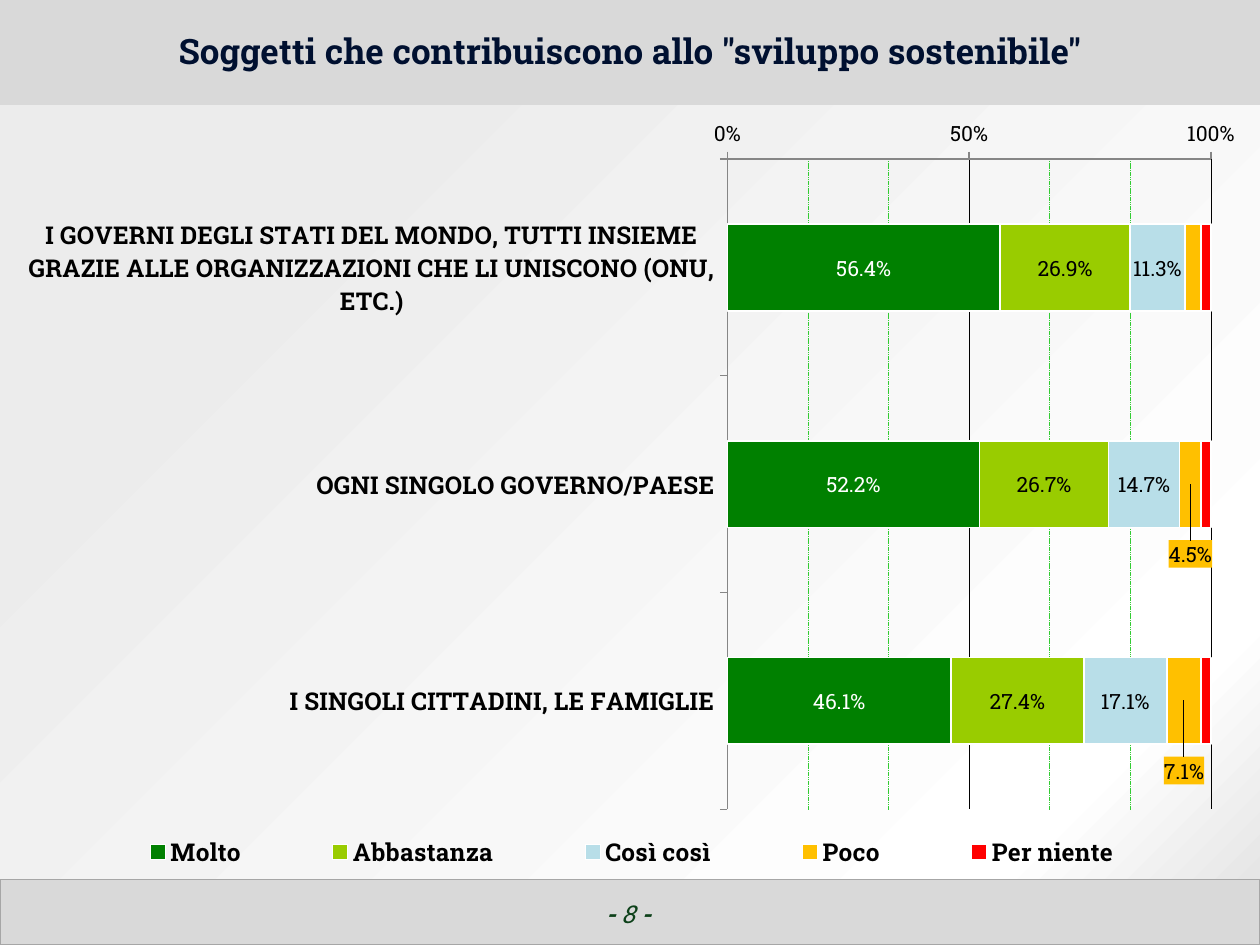
from lxml import etree
from pptx import Presentation
from pptx.chart.data import CategoryChartData
from pptx.dml.color import RGBColor
from pptx.enum.chart import XL_CHART_TYPE as ChartType, XL_LEGEND_POSITION as LegendPosition
from pptx.enum.chart import XL_TICK_MARK as TickMark
from pptx.enum.shapes import MSO_SHAPE as Shape
from pptx.enum.text import MSO_ANCHOR as Anchor, PP_ALIGN as Align
from pptx.oxml import parse_xml
from pptx.oxml.ns import nsdecls, qn
from pptx.util import Pt

PX = 914400 / 126
FONT = "Roboto Slab"
BLACK = RGBColor(0x00, 0x00, 0x00)
WHITE = RGBColor(0xFF, 0xFF, 0xFF)
BAND = RGBColor(0xD9, 0xD9, 0xD9)
BAND_EDGE = RGBColor(0xA6, 0xA6, 0xA6)
AXIS_GREY = RGBColor(0x86, 0x86, 0x86)
GRID_GREEN = RGBColor(0x33, 0xCC, 0x33)
NAVY = RGBColor(0x00, 0x10, 0x30)
PAGE_GREEN = RGBColor(0x0D, 0x41, 0x1A)
GREEN = RGBColor(0x00, 0x80, 0x00)
LIME = RGBColor(0x99, 0xCC, 0x00)
PALE_BLUE = RGBColor(0xB8, 0xDE, 0xE8)
AMBER = RGBColor(0xFF, 0xC0, 0x00)
RED = RGBColor(0xFF, 0x00, 0x00)


def px(*lengths):
    return [round(length * PX) for length in lengths]


def manual_layout(inner=False, edge=True, **fractions):
    """Return a c:layout element; with edge False, x and y are offsets."""
    layout = parse_xml(f"<c:layout {nsdecls('c')}><c:manualLayout/></c:layout>")
    parts = [("layoutTarget", "inner")] if inner else []
    if edge:
        parts += [("xMode", "edge"), ("yMode", "edge")]
    for tag, value in parts + list(fractions.items()):
        etree.SubElement(layout[0], qn(f"c:{tag}")).set("val", str(value))
    return layout


deck = Presentation()
deck.slide_width, deck.slide_height = px(1260, 945)
page = deck.slides.add_slide(deck.slide_layouts[6])

# Bands and backdrop
bands = []
for top, height in ((0, 106), (879, 66), (105, 774)):
    band = page.shapes.add_shape(Shape.RECTANGLE, *px(0, top, 1260, height))
    band.shadow.inherit = False
    band.fill.solid()
    band.fill.fore_color.rgb = BAND
    band.line.fill.background()
    bands.append(band)
header, footer, backdrop = bands
footer.line.color.rgb = BAND_EDGE
footer.line.width = Pt(0.75)

stops = "".join(
    f'<a:gs pos="{position}000"><a:srgbClr val="{color}"/></a:gs>'
    for position, color in ((0, "E6E6E6"), (13, "FFFFFF"), (82, "ECECEC")))
gradient = parse_xml(
    f'<a:gradFill {nsdecls("a")} rotWithShape="1"><a:gsLst>{stops}</a:gsLst>'
    '<a:path path="circle"><a:fillToRect l="100000" t="100000"/></a:path></a:gradFill>')
solid = backdrop._element.spPr.find(qn("a:solidFill"))
solid.getparent().replace(solid, gradient)

# Title and page number: frame, anchor, size, colour, italic, runs (text, bold)
texts = (
    ((20, 4, 1221, 100), Anchor.MIDDLE, 20, NAVY, False,
     [('Soggetti che contribuiscono allo "sviluppo sostenibile"', True)]),
    ((481, 893, 294, 66), Anchor.TOP, 14, PAGE_GREEN, True,
     [("- ", True), ("8 ", False), ("-", True)]),
)
for frame, anchor, size, color, italic, runs in texts:
    box = page.shapes.add_textbox(*px(*frame)).text_frame
    box.word_wrap = True
    box.vertical_anchor = anchor
    para = box.paragraphs[0]
    para.alignment = Align.CENTER
    if size == 20:
        para.line_spacing = Pt(20)
    for text, bold in runs:
        span = para.add_run()
        span.text = text
        span.font.name = FONT
        span.font.size = Pt(size)
        span.font.bold = bold
        span.font.italic = italic
        span.font.color.rgb = color

# Stacked bars: name, values, fill, label colour
answers = (
    ("Molto", (0.564, 0.522, 0.461), GREEN, WHITE),
    ("Abbastanza", (0.269, 0.267, 0.274), LIME, BLACK),
    ("Così così", (0.113, 0.147, 0.171), PALE_BLUE, BLACK),
    ("Poco", (0.034, 0.045, 0.071), AMBER, BLACK),
    ("Per niente", (0.02, 0.02, 0.02), RED, None),
)
data = CategoryChartData(number_format="0.0%")
data.categories = [
    "I GOVERNI DEGLI STATI DEL MONDO, TUTTI INSIEME GRAZIE ALLE ORGANIZZAZIONI"
    " CHE LI UNISCONO (ONU, ETC.)",
    "OGNI SINGOLO GOVERNO/PAESE",
    "I SINGOLI CITTADINI, LE FAMIGLIE",
]
for name, values, _, _ in answers:
    data.add_series(name, values)
chart = page.shapes.add_chart(
    ChartType.BAR_STACKED_100, *px(4, 105, 1256, 774), data).chart
chart.has_title = False
chart.font.name = FONT
chart.font.size = Pt(14)
chart.font.color.rgb = BLACK

plot = chart.plots[0]
plot.gap_width = 150
plot.overlap = 100
plot.vary_by_categories = False
for series, (_, _, fill, label_color) in zip(plot.series, answers):
    series.format.fill.solid()
    series.format.fill.fore_color.rgb = fill
    series.format.line.color.rgb = WHITE
    series.format.line.width = Pt(1)
    if label_color is None:
        continue
    labels = series.data_labels
    labels.show_value = True
    labels.number_format = "0.0%"
    labels.number_format_is_linked = False
    labels.font.name = FONT
    labels.font.size = Pt(12)
    labels.font.color.rgb = label_color

# "Poco": first label hidden, the others moved below their bars
poco_labels = plot.series[3].data_labels._element
poco_labels.insert(0, parse_xml(
    f'<c:dLbl {nsdecls("c")}><c:idx val="0"/><c:delete val="1"/></c:dLbl>'))
flags = "".join(
    f'<c:show{part} val="{int(part == "Val")}"/>'
    for part in ("LegendKey", "Val", "CatName", "SerName", "Percent", "BubbleSize"))
for index in (1, 2):
    label = parse_xml(
        f'<c:dLbl {nsdecls("c", "a")}><c:idx val="{index}"/>'
        '<c:numFmt formatCode="0.0%" sourceLinked="0"/>'
        f'<c:spPr><a:solidFill><a:srgbClr val="{AMBER}"/></a:solidFill></c:spPr>'
        '<c:txPr><a:bodyPr/><a:p><a:pPr><a:defRPr sz="1200">'
        f'<a:solidFill><a:srgbClr val="{BLACK}"/></a:solidFill>'
        f'<a:latin typeface="{FONT}"/></a:defRPr></a:pPr></a:p></c:txPr>{flags}</c:dLbl>')
    label.insert(1, manual_layout(edge=False, x=0, y=0.09))
    poco_labels.insert(index, label)

# Axes
subjects, shares = chart.category_axis, chart.value_axis
subjects.reverse_order = True
subjects.tick_labels.font.bold = True
shares.minimum_scale = 0
shares.maximum_scale = 1
shares.major_unit = 0.5
shares.minor_unit = 0.5 / 3
shares.tick_labels.font.size = Pt(12)
shares.tick_labels.font.name = FONT
shares.tick_labels.number_format = "0%"
shares.tick_labels.number_format_is_linked = False
for axis in (subjects, shares):
    axis.major_tick_mark = TickMark.OUTSIDE
    axis.minor_tick_mark = TickMark.NONE
    axis.format.line.color.rgb = AXIS_GREY
shares.has_major_gridlines = shares.has_minor_gridlines = True
shares.major_gridlines.format.line.color.rgb = BLACK
shares.major_gridlines.format.line.width = Pt(0.25)
shares._element.find(qn("c:minorGridlines")).append(parse_xml(
    f'<c:spPr {nsdecls("c", "a")}><a:ln w="{Pt(0.25)}"><a:solidFill>'
    f'<a:srgbClr val="{GRID_GREEN}"/></a:solidFill><a:prstDash val="sysDash"/></a:ln></c:spPr>'))

# Legend and plot placement
chart.has_legend = True
legend = chart.legend
legend.position = LegendPosition.BOTTOM
legend.include_in_layout = False
legend.font.bold = True
for old in legend._element.findall(qn("c:layout")):
    legend._element.remove(old)
legend._element.find(qn("c:legendPos")).addnext(
    manual_layout(x=0.05, y=0.94, w=0.9, h=0.05))
plot_area = plot._element.getparent()
for old in plot_area.findall(qn("c:layout")):
    plot_area.remove(old)
plot_area.insert(0, manual_layout(
    inner=True, x=round(723 / 1256, 3), y=0.07, w=round(484 / 1256, 3), h=0.84))

deck.save("out.pptx")
